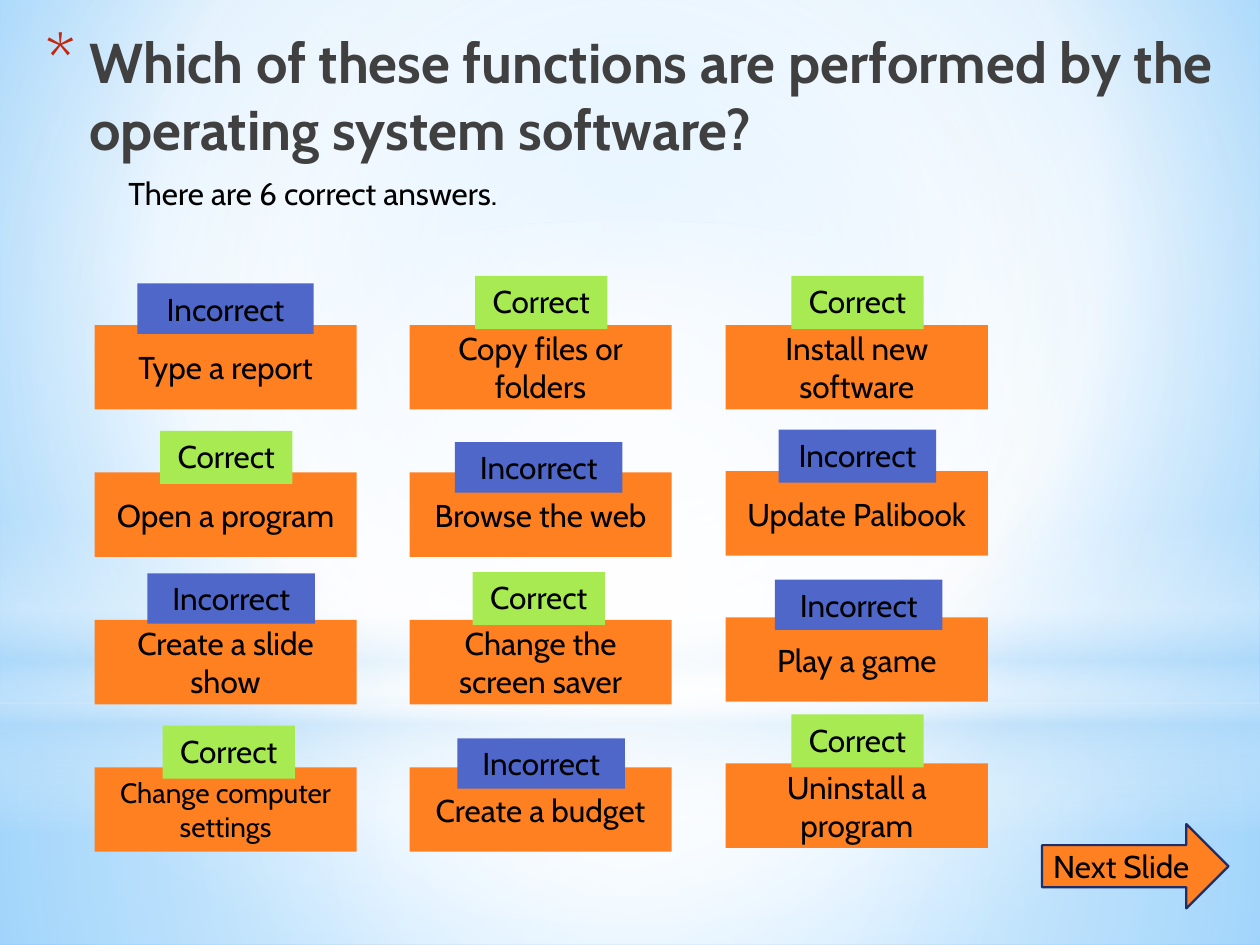
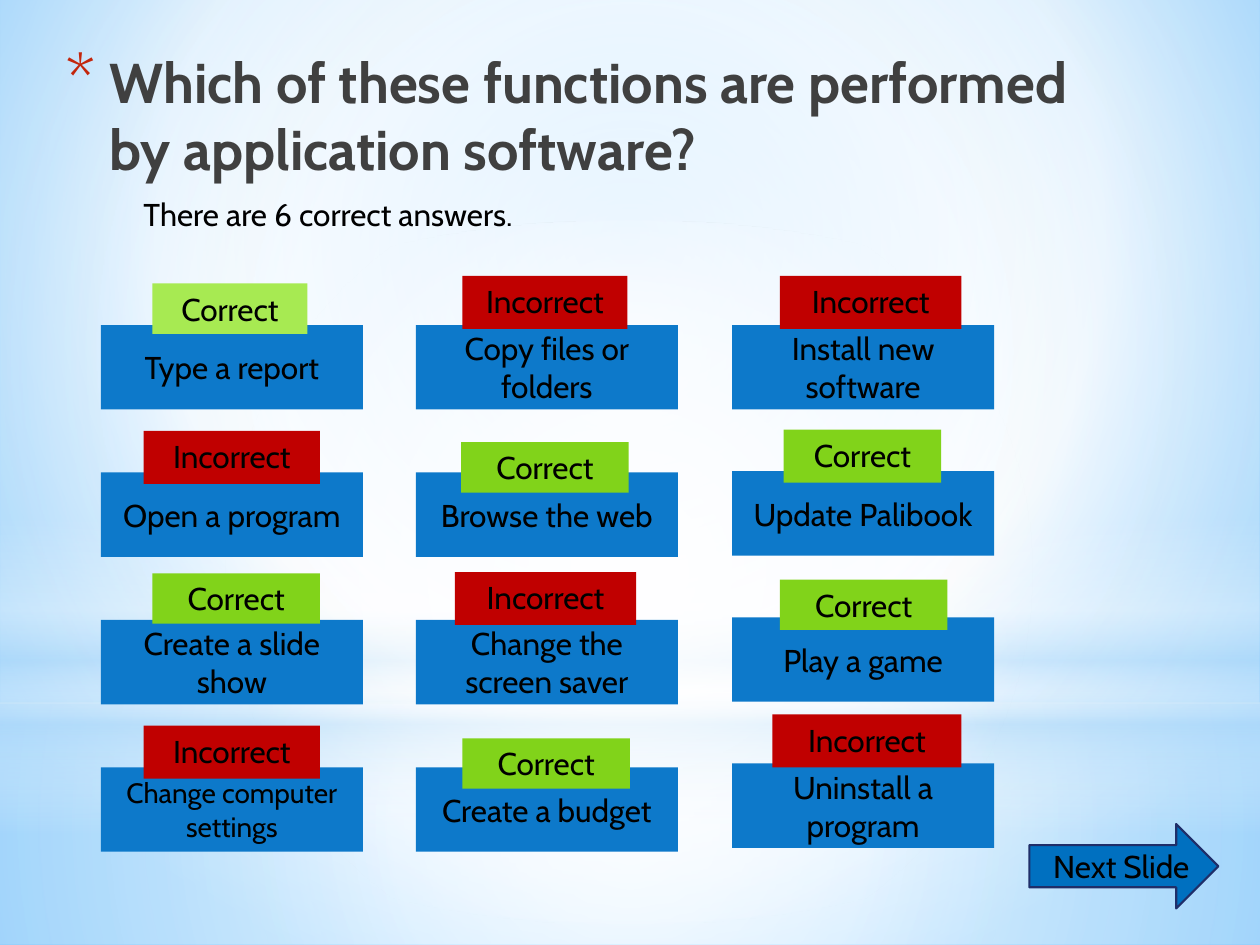
from lxml.etree import SubElement as Sub
from pptx import Presentation
from pptx.dml.color import RGBColor as Rgb
from pptx.enum.shapes import MSO_SHAPE as Preset
from pptx.enum.text import MSO_ANCHOR as Anchor, PP_ALIGN as Align
from pptx.oxml.ns import qn
from pptx.util import Inches, Pt

COLORS = {
    "ink": "000000", "orange": "FF8021", "blue": "0D79CA", "deep blue": "0070C0",
    "indigo": "4E67C8", "red": "C00000", "lime": "A7EA52", "green": "81D31A",
    "navy": "1F2E69", "bullet": "C3260C", "white": "FFFFFF", "mist": "B4DCFA",
    "sky": "9ED5FF", "azure": "5BB9FF", "charcoal": "404040", "midnight": "212745",
}
FONT = "Cabin"
COLUMNS, ROWS = 10, 7.5
CENTER = (50, 50, 50, 50)
VERTICAL = 90

BACKDROP = [(0, "sky", 100), (60, "white", 100), (100, "azure", 100)]
HAZE = [
    (Preset.RECTANGLE, (0, 5.58, 10, 1.92), CENTER,
     [(0, "white", 91), (37, "white", 76), (100, "mist", 79)]),
    (Preset.RECTANGLE, (0, 0, 10, 5.58), CENTER,
     [(0, "white", 89), (48, "white", 62), (100, "mist", 79)]),
    (Preset.RECTANGLE, (0, 4.12, 10, 2.5), VERTICAL,
     [(0, "white", 0), (29, "white", 30), (45, "mist", 40),
      (55, "white", 26), (65, "mist", 60), (100, "white", 0)]),
    (Preset.OVAL, (0, 1.75, 10, 5.58), CENTER,
     [(0, "white", 100), (56, "white", 0)]),
]
TITLE_INK = [(0, "ink", 100), (40, "charcoal", 100), (100, "midnight", 65)]

CARD_TOP, CARD_WIDTH, CARD_HEIGHT = 2.58, 2.08, 0.67
COLUMN_STEP = 2.5
COLUMN_SHIFTS = (0, 0, 0.01)
ROW_STEPS = (1.17, 1.17, 1.16)
TASKS = [
    [("Type a report", 0.33, 0.4), ("Copy files or folders", 0.39, 0.42),
     ("Install new software", 0.39, 0.42)],
    [("Open a program", 0.33, 0.42), ("Browse the web", 0.24, 0.4),
     ("Update Palibook", 0.33, 0.42)],
    [("Create a slide show", 0.37, 0.4), ("Change the screen saver", 0.38, 0.42),
     ("Play a game", 0.3, 0.4)],
    [("Change computer settings", 0.33, 0.42), ("Create a budget", 0.23, 0.4),
     ("Uninstall a program", 0.39, 0.42)],
]
QUIZZES = [
    {
        "question": "Which of these functions are performed by the operating system software?",
        "title": (0.26, 0.17, 9.49, 1.42), "hint": (0.92, 1.33, 7.42, 0.4),
        "left": 0.75, "card": "orange",
        "arrow": (8.27, 6.54, 1.48, 0.67), "arrow color": "orange",
        "verdicts": [
            [("indigo", 0.34, 1.4), ("lime", 0.52, 1.05), ("lime", 0.52, 1.05)],
            [("lime", 0.52, 1.05), ("indigo", 0.36, 1.33), ("indigo", 0.42, 1.25)],
            [("indigo", 0.42, 1.33), ("lime", 0.5, 1.05), ("indigo", 0.39, 1.33)],
            [("lime", 0.54, 1.05), ("indigo", 0.38, 1.33), ("lime", 0.52, 1.05)],
        ],
    },
    {
        "question": "Which of these functions are performed by application software?",
        "title": (0.42, 0.33, 8.67, 1.25), "hint": (1.04, 1.5, 7.42, 0.4),
        "left": 0.8, "card": "blue",
        "arrow": (8.17, 6.54, 1.5, 0.67), "arrow color": "deep blue",
        "verdicts": [
            [("lime", 0.41, 1.23), ("red", 0.37, 1.31), ("red", 0.38, 1.44)],
            [("red", 0.34, 1.4), ("green", 0.36, 1.33), ("green", 0.41, 1.25)],
            [("green", 0.41, 1.33), ("red", 0.31, 1.44), ("green", 0.38, 1.33)],
            [("red", 0.34, 1.4), ("green", 0.37, 1.33), ("red", 0.32, 1.5)],
        ],
    },
]


def rgb(color):
    return Rgb.from_string(COLORS[color])


def blend(fill, stops, direction):
    fill.gradient()
    gradient = fill._xPr.find(qn("a:gradFill"))
    for child in list(gradient):
        gradient.remove(child)
    stop_list = Sub(gradient, qn("a:gsLst"))
    for position, color, opacity in stops:
        stop = Sub(stop_list, qn("a:gs"), pos=str(position * 1000))
        tint = Sub(stop, qn("a:srgbClr"), val=COLORS[color])
        if opacity < 100:
            Sub(tint, qn("a:alpha"), val=str(opacity * 1000))
    if direction == VERTICAL:
        Sub(gradient, qn("a:lin"), ang=str(VERTICAL * 60000), scaled="0")
    else:
        focus = Sub(gradient, qn("a:path"), {"path": "circle"})
        edges = {side: str(share * 1000) for side, share in zip("ltrb", direction)}
        Sub(focus, qn("a:fillToRect"), edges)


class Deck:
    def __init__(self):
        self.show = Presentation()
        self.show.slide_width, self.show.slide_height = Inches(10), Inches(7.5)
        self.column = self.show.slide_width / COLUMNS
        self.row = self.show.slide_height / ROWS
        self.slide = None
        blend(self.show.slide_master.background.fill, BACKDROP, (20, 10, 20, 60))

    def place(self, box):
        return [round(cells * unit) for cells, unit in zip(box, (self.column, self.row) * 2)]

    def new_slide(self):
        self.slide = self.show.slides.add_slide(self.show.slide_layouts[6])
        for preset, box, direction, stops in HAZE:
            blend(self.shape(preset, box).fill, stops, direction)

    def shape(self, preset, box, color=None, outline=None):
        shape = self.slide.shapes.add_shape(preset, *self.place(box))
        shape.shadow.inherit = False
        if color:
            shape.fill.solid()
            shape.fill.fore_color.rgb = rgb(color)
        if outline:
            shape.line.color.rgb = rgb(outline)
            shape.line.width = Pt(1.25)
        else:
            shape.line.fill.background()
        return shape

    def fill_text(self, holder, words, size=18, align=Align.LEFT, anchor=Anchor.TOP):
        frame = holder.text_frame
        frame.text = words
        frame.word_wrap = True
        frame.vertical_anchor = anchor
        paragraph = frame.paragraphs[0]
        paragraph.alignment = align
        font = paragraph.runs[0].font
        font.name, font.size = FONT, Pt(size)
        font.color.rgb = rgb("ink")
        return paragraph

    def text(self, words, box, size=18):
        holder = self.slide.shapes.add_textbox(*self.place(box))
        return self.fill_text(holder, words, size)

    def title(self, words, box):
        paragraph = self.text(words, box, 32)
        font = paragraph.runs[0].font
        font.bold = True
        blend(font.fill, TITLE_INK, VERTICAL)
        props = paragraph._p.get_or_add_pPr()
        indent = Inches(0.35)
        props.set("marL", str(indent))
        props.set("indent", str(-indent))
        Sub(Sub(props, qn("a:buClr")), qn("a:srgbClr"), val=COLORS["bullet"])
        Sub(props, qn("a:buSzPct"), val="128000")
        Sub(props, qn("a:buFont"), typeface=FONT)
        Sub(props, qn("a:buChar"), char="*")

    def label(self, words, box, color, size=18, anchor=Anchor.TOP):
        self.fill_text(self.shape(Preset.RECTANGLE, box, color), words, size,
                       Align.CENTER, anchor)

    def answers(self, quiz):
        for row, (tasks, verdicts) in enumerate(zip(TASKS, quiz["verdicts"])):
            for column, (task, verdict) in enumerate(zip(tasks, verdicts)):
                words, lift, height = task
                color, offset, width = verdict
                left = quiz["left"] + column * COLUMN_STEP + COLUMN_SHIFTS[column]
                top = CARD_TOP + row * ROW_STEPS[column]
                self.label(words, (left, top, CARD_WIDTH, CARD_HEIGHT), quiz["card"],
                           16 if len(words) > 23 else 18, Anchor.MIDDLE)
                self.label("Correct" if color in ("lime", "green") else "Incorrect",
                           (left + offset, top - lift, width, height), color)

    def next_button(self, box, color):
        self.shape(Preset.RIGHT_ARROW, box, color, "navy")
        self.text("Next Slide", (8.26, 6.67, 1.41, 0.4))


def main():
    deck = Deck()
    for quiz in QUIZZES:
        deck.new_slide()
        deck.title(quiz["question"], quiz["title"])
        deck.text("There are 6 correct answers.", quiz["hint"])
        deck.answers(quiz)
        deck.next_button(quiz["arrow"], quiz["arrow color"])
    deck.show.save("out.pptx")


if __name__ == "__main__":
    main()
